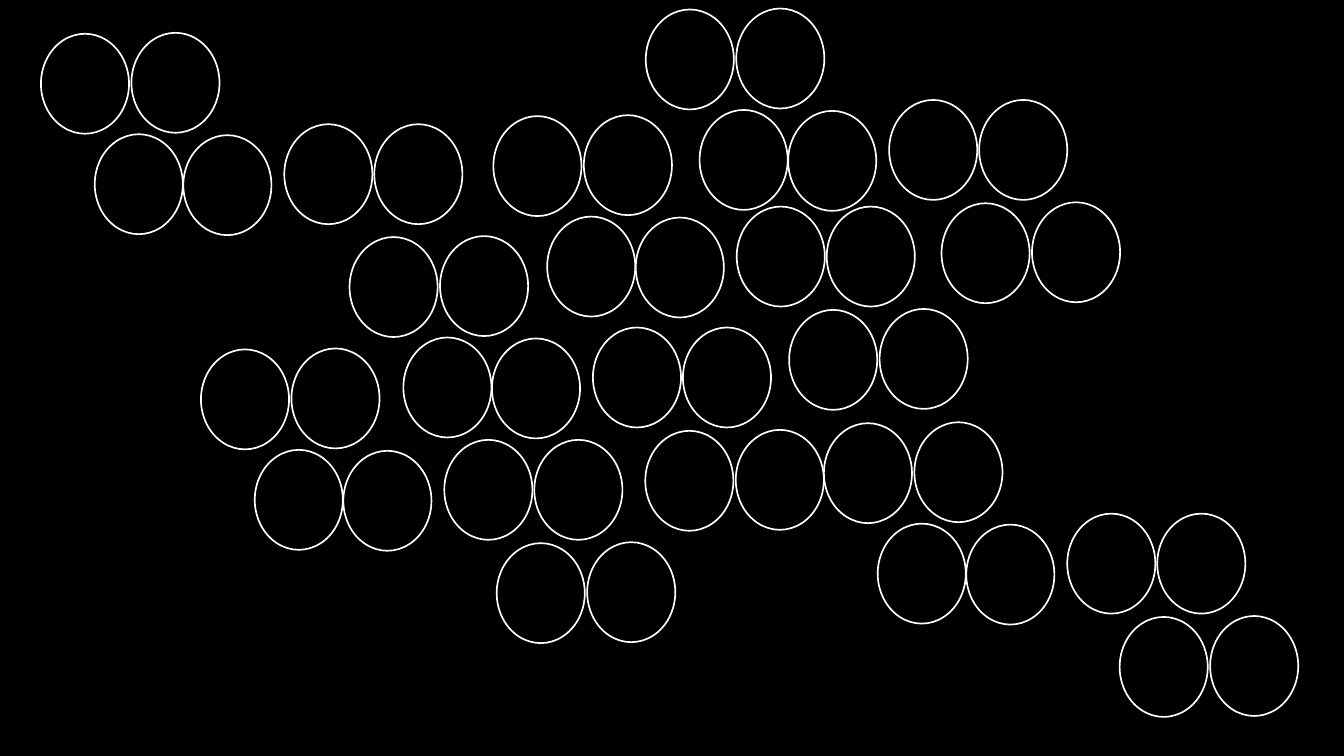
from dataclasses import dataclass

from pptx import Presentation
from pptx.dml.color import RGBColor
from pptx.enum.shapes import MSO_SHAPE
from pptx.util import Cm, Pt

OVAL = MSO_SHAPE.OVAL
BLANK_LAYOUT = 6

CLUSTER_ORIGINS = [
    (7.34, 4.98),
    (10.36, 2.44),
    (4.22, 7.34),
    (17.3, 8.89),
    (13.56, 0.2),
]
PARTIAL_CLUSTER_ORIGIN = (0.86, 0.71)
PARTIAL_CLUSTER_COUNT = 6
OVAL_OFFSETS = [
    (0, 0),
    (1.9, -0.02),
    (1.13, 2.11),
    (2.99, 2.13),
    (5.11, 1.9),
    (7, 1.9),
    (6.21, 4.07),
    (8.11, 4.05),
]
OVAL_WIDTH = 1.85
OVAL_HEIGHT = 2.1


@dataclass(frozen=True)
class Theme:
    background: RGBColor = RGBColor(0, 0, 0)
    outline: RGBColor = RGBColor(255, 255, 255)
    outline_width: Pt = Pt(1)
    font: str = "Calibri"


THEME = Theme()


def add_oval(slide, left, top):
    shape = slide.shapes.add_shape(
        OVAL, Cm(left), Cm(top), Cm(OVAL_WIDTH), Cm(OVAL_HEIGHT)
    )
    shape.shadow.inherit = False
    shape.fill.background()
    shape.line.color.rgb = THEME.outline
    shape.line.width = THEME.outline_width
    font = shape.text_frame.paragraphs[0].font
    font.name = THEME.font
    font.color.rgb = THEME.outline


def add_cluster(slide, origin, offsets):
    left, top = origin
    for across, down in offsets:
        add_oval(slide, left + across, top + down)


def main():
    presentation = Presentation()
    presentation.slide_width = Cm(28.22)
    presentation.slide_height = Cm(15.88)
    slide = presentation.slides.add_slide(presentation.slide_layouts[BLANK_LAYOUT])
    slide.background.fill.solid()
    slide.background.fill.fore_color.rgb = THEME.background

    for origin in CLUSTER_ORIGINS:
        add_cluster(slide, origin, OVAL_OFFSETS)
    add_cluster(slide, PARTIAL_CLUSTER_ORIGIN, OVAL_OFFSETS[:PARTIAL_CLUSTER_COUNT])

    presentation.save("out.pptx")


if __name__ == "__main__":
    main()
